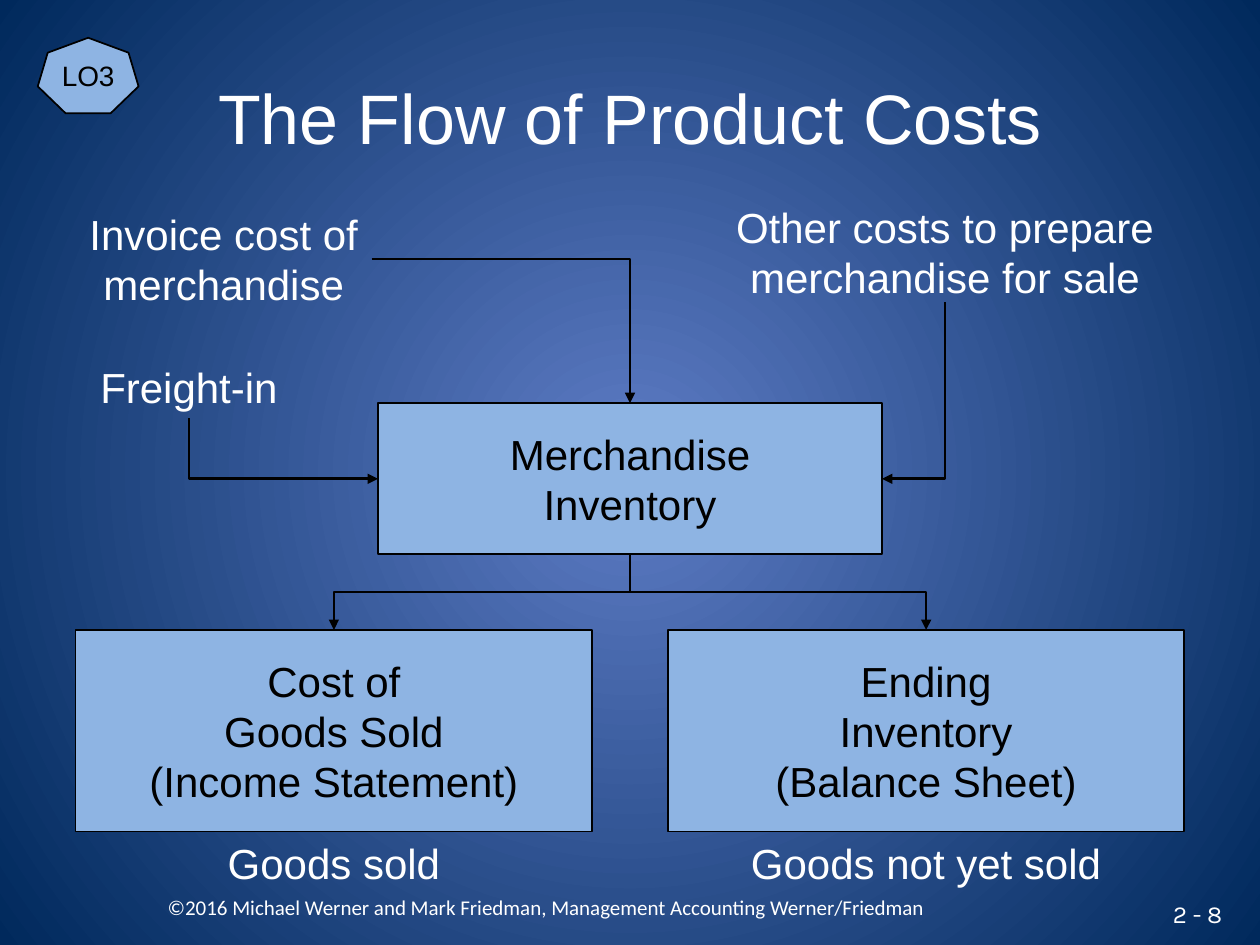
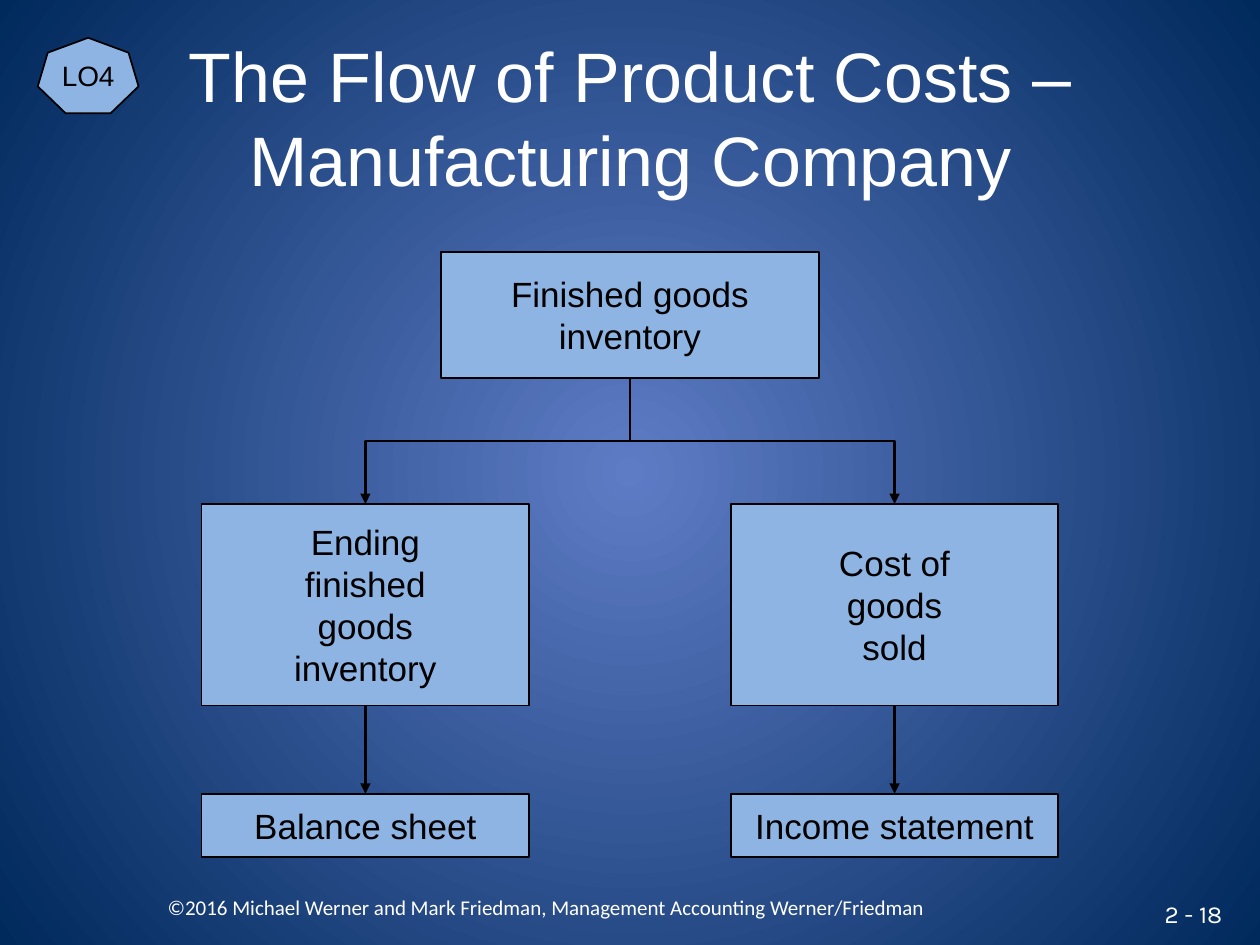
from dataclasses import dataclass
from typing import NamedTuple

from lxml import etree
from pptx import Presentation
from pptx import util as u
from pptx.dml.color import RGBColor
from pptx.enum import shapes, text
from pptx.oxml import ns

COLORS = {
    "glow": "5E7CC5",
    "edge": "00295C",
    "box": "8EB4E3",
    "line": "000000",
    "dark_text": "000000",
    "light_text": "FFFFFF",
}
BODY_FONT = "Arial"
FOOTER = "©2016 Michael Werner and Mark Friedman, Management Accounting Werner/Friedman"


class Point(NamedTuple):
    x: float
    y: float


@dataclass(frozen=True)
class Block:
    """A text block, measured in inches; each line is a paragraph."""
    text: str
    left: float
    top: float
    width: float
    height: float

    @property
    def frame(self) -> tuple:
        return tuple(u.Inches(n) for n in (self.left, self.top, self.width, self.height))

    @property
    def top_middle(self) -> Point:
        return Point(self.left + self.width / 2, self.top)

    @property
    def bottom_middle(self) -> Point:
        return Point(self.left + self.width / 2, self.top + self.height)

    @property
    def left_middle(self) -> Point:
        return Point(self.left, self.top + self.height / 2)

    @property
    def right_middle(self) -> Point:
        return Point(self.left + self.width, self.top + self.height / 2)


def rgb(name: str) -> RGBColor:
    return RGBColor.from_string(COLORS[name])


def write(shape, content: str, *, size: float, color: str = "light_text",
          font: str = BODY_FONT, align=text.PP_ALIGN.CENTER, wrap: bool = False) -> None:
    frame = shape.text_frame
    frame.text = content
    frame.word_wrap = wrap
    frame.vertical_anchor = text.MSO_ANCHOR.MIDDLE
    for paragraph in frame.paragraphs:
        paragraph.alignment = align
        for run in paragraph.runs:
            run.font.size = u.Pt(size)
            run.font.name = font
            run.font.color.rgb = rgb(color)


def add_label(slide, block: Block, *, size: float = 24, **text_format) -> None:
    write(slide.shapes.add_textbox(*block.frame), block.text, size=size, **text_format)


def add_box(slide, block: Block, *, size: float = 24, kind=shapes.MSO_SHAPE.RECTANGLE):
    shape = slide.shapes.add_shape(kind, *block.frame)
    shape.shadow.inherit = False
    shape.fill.solid()
    shape.fill.fore_color.rgb = rgb("box")
    shape.line.color.rgb = rgb("line")
    shape.line.width = u.Pt(1)
    write(shape, block.text, size=size, color="dark_text")
    return shape


def add_arrow(slide, kind, start: Point, end: Point):
    connector = slide.shapes.add_connector(kind, *(u.Inches(n) for n in (*start, *end)))
    connector.line.color.rgb = rgb("line")
    connector.line.width = u.Pt(1.5)
    line = connector.line._get_or_add_ln()
    etree.SubElement(line, ns.qn("a:tailEnd"), type="triangle")
    etree.SubElement(connector._element.spPr, ns.qn("a:effectLst"))
    return connector


def add_corner(slide, start: Point, end: Point):
    """Arrow that runs across, then down."""
    connector = add_arrow(slide, shapes.MSO_CONNECTOR.ELBOW, start, end)
    connector._element.spPr.find(ns.qn("a:prstGeom")).set("prst", "bentConnector2")
    return connector


def add_drop(slide, start: Point, end: Point, *, corner: bool = False) -> None:
    """Arrow that leaves downwards: an elbow turned by a quarter about its centre."""
    center = Point((start.x + end.x) / 2, (start.y + end.y) / 2)
    half_width, half_height = (end.y - start.y) / 2, abs(end.x - start.x) / 2
    to_right = end.x > start.x
    side = half_width if to_right else -half_width
    draw = add_corner if corner else (
        lambda *ends: add_arrow(ends[0], shapes.MSO_CONNECTOR.ELBOW, *ends[1:]))
    connector = draw(slide, Point(center.x + side, center.y - half_height),
                     Point(center.x - side, center.y + half_height))
    degrees = 270 if to_right else 90
    connector._element.spPr.find(ns.qn("a:xfrm")).set("rot", str(degrees * 60000))


def paint_background(master) -> None:
    fill = master.background.fill
    fill.gradient()
    for stop, position, name in zip(fill.gradient_stops, (0, 1), ("glow", "edge")):
        stop.position = position
        stop.color.rgb = rgb(name)
    linear = next(master._element.iter(ns.qn("a:lin")))
    circle = etree.Element(ns.qn("a:path"), path="circle")
    etree.SubElement(circle, ns.qn("a:fillToRect"),
                     {edge: "50000" for edge in ("l", "t", "r", "b")})
    linear.getparent().replace(linear, circle)


def add_slide(presentation, title: str, objective: str, number: str):
    slide = presentation.slides.add_slide(presentation.slide_layouts[5])
    heading = slide.shapes.title
    heading.left, heading.top, heading.width, heading.height = Block(
        title, 0.5, 0.3, 9, 1.25).frame
    write(heading, title, size=40, wrap=True)
    add_box(slide, Block(objective, 0.3, 0.3, 0.8, 0.6), size=16,
            kind=shapes.MSO_SHAPE.HEPTAGON)
    add_label(slide, Block(FOOTER, 0.42, 7, 7.83, 0.4), size=12, font="Calibri", wrap=True)
    add_label(slide, Block(number, 9, 7.1, 0.8, 0.3), size=14, font="Karla",
              align=text.PP_ALIGN.RIGHT)
    return slide


def build_merchandise_flow(presentation) -> None:
    slide = add_slide(presentation, "The Flow of Product Costs", "LO3", "2 - 8")
    inventory = Block("Merchandise\nInventory", 3, 3.2, 4, 1.2)
    invoice = Block("Invoice cost of\nmerchandise", 0.6, 1.6, 2.35, 0.91)
    freight = Block("Freight-in", 0.6, 2.82, 1.8, 0.5)
    other = Block("Other costs to prepare\nmerchandise for sale", 5.6, 1.6, 3.8, 0.8)

    add_box(slide, inventory)
    for source in (invoice, freight, other):
        add_label(slide, source)
    add_corner(slide, invoice.right_middle, inventory.top_middle)
    add_drop(slide, freight.bottom_middle, inventory.left_middle, corner=True)
    add_drop(slide, other.bottom_middle, inventory.right_middle, corner=True)

    for left, outcome, caption in (
        (0.6, "Cost of\nGoods Sold\n(Income Statement)", "Goods sold"),
        (5.3, "Ending\nInventory\n(Balance Sheet)", "Goods not yet sold"),
    ):
        result = Block(outcome, left, 5, 4.1, 1.6)
        add_box(slide, result)
        add_label(slide, Block(caption, left, 6.6, 4.1, 0.5))
        add_drop(slide, inventory.bottom_middle, result.top_middle)


def build_manufacturing_flow(presentation) -> None:
    slide = add_slide(presentation, "The Flow of Product Costs –\vManufacturing Company",
                      "LO4", "2 - 18")
    finished = Block("Finished goods\ninventory", 3.5, 2, 3, 1)
    add_box(slide, finished, size=20)

    for left, outcome, report in (
        (1.6, "Ending\nfinished\ngoods\ninventory", "Balance sheet"),
        (5.8, "Cost of\ngoods\nsold", "Income statement"),
    ):
        result = Block(outcome, left, 4, 2.6, 1.6)
        statement = Block(report, left, 6.3, 2.6, 0.5)
        result_box = add_box(slide, result, size=20)
        statement_box = add_box(slide, statement, size=20)
        add_drop(slide, finished.bottom_middle, result.top_middle)
        arrow = add_arrow(slide, shapes.MSO_CONNECTOR.STRAIGHT,
                          result.bottom_middle, statement.top_middle)
        arrow.begin_connect(result_box, 2)
        arrow.end_connect(statement_box, 0)


def main() -> None:
    presentation = Presentation()
    presentation.slide_width = u.Inches(10)
    presentation.slide_height = u.Inches(7.5)
    paint_background(presentation.slide_master)
    build_merchandise_flow(presentation)
    build_manufacturing_flow(presentation)
    presentation.save("out.pptx")


if __name__ == "__main__":
    main()
